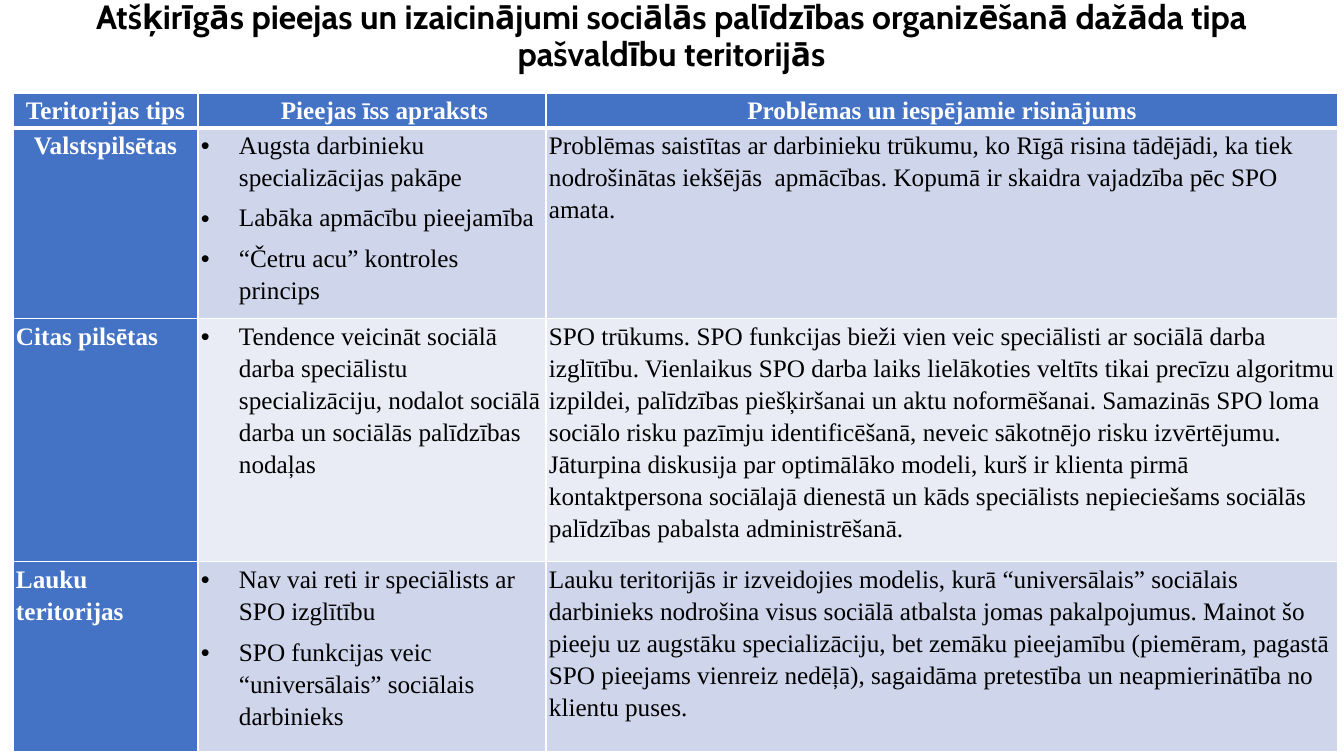
from dataclasses import dataclass

from lxml import etree
from pptx import Presentation
from pptx.dml.color import RGBColor
from pptx.enum.text import MSO_ANCHOR, PP_ALIGN
from pptx.oxml.ns import qn
from pptx.util import Inches, Pt

CENTER, LEFT = PP_ALIGN.CENTER, PP_ALIGN.LEFT
MIDDLE = MSO_ANCHOR.MIDDLE

TITLE = ("Atšķirīgās pieejas un izaicinājumi sociālās palīdzības organizēšanā "
         "dažāda tipa pašvaldību teritorijās")
HEADERS = ["Teritorijas tips", "Pieejas īss apraksts", "Problēmas un iespējamie risinājums"]
TERRITORIES = [
    ("Valstspilsētas",
     ["Augsta darbinieku specializācijas pakāpe",
      "Labāka apmācību pieejamība",
      "“Četru acu” kontroles princips"],
     "Problēmas saistītas ar darbinieku trūkumu, ko Rīgā risina tādējādi, ka tiek "
     "nodrošinātas iekšējās  apmācības. Kopumā ir skaidra vajadzība pēc SPO amata."),
    ("Citas pilsētas",
     ["Tendence veicināt sociālā darba speciālistu specializāciju, nodalot sociālā darba "
      "un sociālās palīdzības nodaļas"],
     "SPO trūkums. SPO funkcijas bieži vien veic speciālisti ar sociālā darba izglītību. "
     "Vienlaikus SPO darba laiks lielākoties veltīts tikai precīzu algoritmu izpildei, "
     "palīdzības piešķiršanai un aktu noformēšanai. Samazinās SPO loma sociālo risku pazīmju "
     "identificēšanā, neveic sākotnējo risku izvērtējumu. Jāturpina diskusija par optimālāko "
     "modeli, kurš ir klienta pirmā kontaktpersona sociālajā dienestā un kāds speciālists "
     "nepieciešams sociālās palīdzības pabalsta administrēšanā."),
    ("Lauku teritorijas",
     ["Nav vai reti ir speciālists ar SPO izglītību",
      "SPO funkcijas veic “universālais” sociālais darbinieks"],
     "Lauku teritorijās ir izveidojies modelis, kurā “universālais” sociālais darbinieks "
     "nodrošina visus sociālā atbalsta jomas pakalpojumus. Mainot šo pieeju uz augstāku "
     "specializāciju, bet zemāku pieejamību (piemēram, pagastā SPO pieejams vienreiz nedēļā), "
     "sagaidāma pretestība un neapmierinātība no klientu puses."),
]

PX = Inches(1) / 100.8
SLIDE_SIZE = (1344, 756)
TITLE_BOX = (13, -2, 1317, 78)
TABLE_CORNER = (13, 93)
COLUMN_WIDTHS = [185, 348, 792]
ROW_HEIGHTS = [32, 188, 240, 190]
CELL_MARGIN = 3
BULLET_INDENT = 38
HEADER_INDENT = 25


@dataclass(frozen=True)
class Theme:
    title_font: str = "Cabin"
    table_font: str = "Times New Roman"
    title_size: int = 24
    table_size: int = 18
    black: str = "000000"
    white: str = "FFFFFF"
    accent: str = "4472C4"
    bands: tuple = ("CFD5EA", "E9EBF5")
    thin: int = 1
    thick: int = 3


THEME = Theme()


def emu(pixels):
    return round(pixels * PX)


def add_span(para, text, font, size, color, bold):
    span = para.add_run()
    span.text = text
    span.font.name = font
    span.font.size = Pt(size)
    span.font.bold = bold
    span.font.color.rgb = RGBColor.from_string(color)


def set_indent(para, left, bulleted=False):
    """Indent a paragraph, hanging it from a bullet if asked."""
    properties = para._p.get_or_add_pPr()
    properties.set("marL", str(emu(left)))
    properties.set("indent", str(-emu(left) if bulleted else 0))
    if bulleted:
        etree.SubElement(properties, qn("a:buFont"), typeface="Arial")
        etree.SubElement(properties, qn("a:buChar"), char="•")


def set_borders(cell, top, bottom):
    properties = cell._tc.get_or_add_tcPr()
    widths = {"lnL": THEME.thin, "lnR": THEME.thin, "lnT": top, "lnB": bottom}
    for side, width in widths.items():
        line = etree.SubElement(properties, qn(f"a:{side}"), w=str(Pt(width)))
        fill = etree.SubElement(line, qn("a:solidFill"))
        etree.SubElement(fill, qn("a:srgbClr"), val=THEME.white)


def fill_cell(cell, texts, row, column):
    is_header = row == 0
    is_label = is_header or column == 0
    is_bulleted = column == 1 and not is_header
    set_borders(cell,
                top=THEME.thick if row == 1 else THEME.thin,
                bottom=THEME.thick if is_header else THEME.thin)
    cell.fill.solid()
    background = THEME.accent if is_label else THEME.bands[(row - 1) % 2]
    cell.fill.fore_color.rgb = RGBColor.from_string(background)
    cell.margin_left = cell.margin_right = emu(CELL_MARGIN)
    cell.margin_top = cell.margin_bottom = 0

    frame = cell.text_frame
    for index, text in enumerate(texts):
        para = frame.add_paragraph() if index else frame.paragraphs[0]
        para.alignment = CENTER if is_header or (row, column) == (1, 0) else LEFT
        para.line_spacing = 1.15
        para.space_after = Pt(6)
        if is_bulleted:
            set_indent(para, BULLET_INDENT, bulleted=True)
        elif column == 1:
            set_indent(para, HEADER_INDENT)
        add_span(para, text, THEME.table_font, THEME.table_size,
                 THEME.white if is_label else THEME.black, is_label)


def add_title(slide):
    box = slide.shapes.add_textbox(*map(emu, TITLE_BOX))
    frame = box.text_frame
    frame.word_wrap = True
    frame.vertical_anchor = MIDDLE
    para = frame.paragraphs[0]
    para.alignment = CENTER
    para.line_spacing = 0.9
    add_span(para, TITLE, THEME.title_font, THEME.title_size, THEME.black, True)


def add_territory_table(slide):
    rows = [[[header] for header in HEADERS]]
    rows += [[[name], points, [problem]] for name, points, problem in TERRITORIES]
    bounds = (*TABLE_CORNER, sum(COLUMN_WIDTHS), sum(ROW_HEIGHTS))
    table = slide.shapes.add_table(len(rows), len(HEADERS), *map(emu, bounds)).table
    for column, width in zip(table.columns, COLUMN_WIDTHS):
        column.width = emu(width)
    for table_row, height in zip(table.rows, ROW_HEIGHTS):
        table_row.height = emu(height)
    for row, entries in enumerate(rows):
        for column, texts in enumerate(entries):
            fill_cell(table.cell(row, column), texts, row, column)


def main():
    deck = Presentation()
    deck.slide_width, deck.slide_height = map(emu, SLIDE_SIZE)
    slide = deck.slides.add_slide(deck.slide_layouts[6])
    add_title(slide)
    add_territory_table(slide)
    deck.save("out.pptx")


if __name__ == "__main__":
    main()
